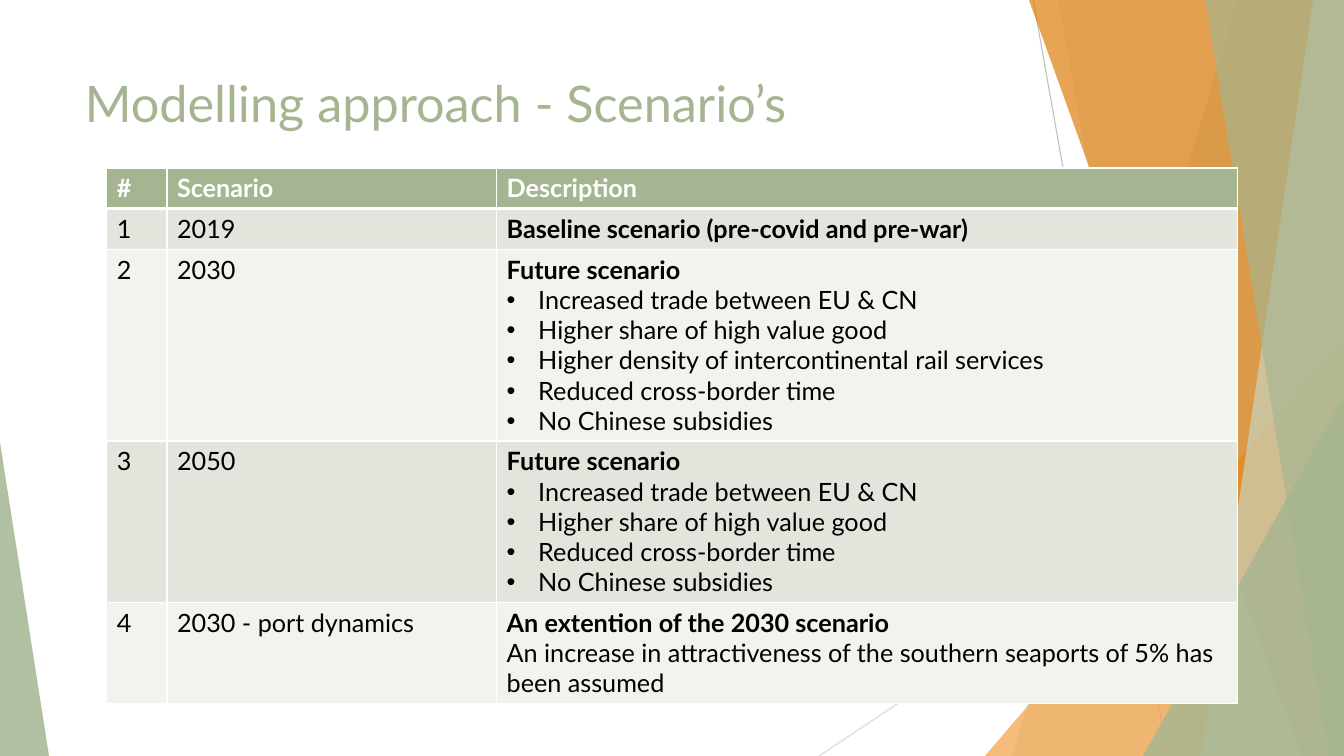
from dataclasses import dataclass

from lxml.etree import SubElement
from pptx import Presentation
from pptx.dml.color import RGBColor as Color
from pptx.enum.shapes import MSO_CONNECTOR as Connector, MSO_SHAPE as Preset
from pptx.oxml import parse_xml
from pptx.oxml.ns import nsdecls, qn
from pptx.util import Pt


@dataclass(frozen=True)
class Theme:
    font: str = "Lato"
    title_size: int = 36
    body_size: int = 18
    sage: str = "A5B592"
    pale_sage: str = "C9D3BE"
    orange: str = "F3A447"
    dark_orange: str = "DD7E0E"
    white: str = "FFFFFF"
    black: str = "000000"
    grey: str = "BFBFBF"
    light_grey: str = "D9D9D9"
    bands: tuple = ("E1E5DC", "F0F3EE")


def apply(target, **values):
    for name, value in values.items():
        setattr(target, name, value)


class Page:
    def __init__(self, deck, theme):
        self.theme = theme
        self.width, self.height = deck.slide_width.pt, deck.slide_height.pt
        self.shapes = deck.slides.add_slide(deck.slide_layouts[6]).shapes

    def line(self, start, end, color):
        line = self.shapes.add_connector(Connector.STRAIGHT, *map(Pt, start + end))
        line.line.color.rgb = Color.from_string(color)
        line.line.width = Pt(0.75)
        SubElement(line._element.spPr, qn("a:effectLst"))

    def paint(self, shape, color, opacity):
        shape.shadow.inherit = False
        shape.line.fill.background()
        shape.fill.solid()
        shape.fill.fore_color.rgb = Color.from_string(color)
        tint = shape._element.spPr.find(qn("a:solidFill"))[0]
        SubElement(tint, qn("a:alpha"), val=str(opacity * 1000))

    def facet(self, top_left, bottom_left, color, opacity):
        builder = self.shapes.build_freeform(Pt(top_left), 0)
        corners = [(self.width, 0), (self.width, self.height), (bottom_left, self.height)]
        builder.add_line_segments([(Pt(x), Pt(y)) for x, y in corners])
        self.paint(builder.convert_to_shape(), color, opacity)

    def triangle(self, left, top, width, apex, color, opacity):
        size = map(Pt, (left, top, width, self.height - top))
        shape = self.shapes.add_shape(Preset.ISOSCELES_TRIANGLE, *size)
        shape.adjustments[0] = apex
        self.paint(shape, color, opacity)

    def span(self, para, text, size, color, bold=False):
        span = para.add_run()
        span.text = text
        apply(span.font, name=self.theme.font, size=Pt(size), bold=bold)
        span.font.color.rgb = Color.from_string(color)

    def title(self, text, left, top, width, height):
        box = self.shapes.add_textbox(*map(Pt, (left, top, width, height)))
        box.text_frame.word_wrap = True
        self.span(box.text_frame.paragraphs[0], text, self.theme.title_size, self.theme.sage)

    def bullet(self, para):
        props = para._p.get_or_add_pPr()
        props.set("marL", str(Pt(22.5)))
        props.set("indent", str(Pt(-22.5)))
        SubElement(props, qn("a:buFont"), typeface="Arial")
        SubElement(props, qn("a:buChar"), char="•")

    def borders(self, cell, bottom):
        widths = {"lnL": 1, "lnR": 1, "lnT": 1, "lnB": bottom}
        for index, (side, width) in enumerate(widths.items()):
            border = parse_xml(
                f'<a:{side} {nsdecls("a")} w="{Pt(width)}"><a:solidFill>'
                f'<a:srgbClr val="{self.theme.white}"/></a:solidFill></a:{side}>')
            cell._tc.get_or_add_tcPr().insert(index, border)

    def cell(self, cell, lines, fill, color, bold_first, bulleted, bottom):
        cell.fill.solid()
        cell.fill.fore_color.rgb = Color.from_string(fill)
        self.borders(cell, bottom)
        frame = cell.text_frame
        for index, text in enumerate(lines):
            para = frame.add_paragraph() if index else frame.paragraphs[0]
            if index and bulleted:
                self.bullet(para)
            self.span(para, text, self.theme.body_size, color, bold_first and index == 0)

    def table(self, left, top, widths, heights, header, scenarios):
        area = map(Pt, (left, top, sum(widths), sum(heights)))
        table = self.shapes.add_table(len(heights), len(widths), *area).table
        apply(table, first_row=False, horz_banding=False)
        for column, width in zip(table.columns, widths):
            column.width = Pt(width)
        for row, height in zip(table.rows, heights):
            row.height = Pt(height)
        theme = self.theme
        for cell, text in zip(table.rows[0].cells, header):
            self.cell(cell, [text], theme.sage, theme.white, True, False, 3)
        for number, (name, bulleted, lines) in enumerate(scenarios, 1):
            fill = theme.bands[(number - 1) % 2]
            contents = [str(number)], [name], lines
            for index, (cell, content) in enumerate(zip(table.rows[number].cells, contents)):
                self.cell(cell, content, fill, theme.black, index == 2, bulleted, 1)


TRADE = ["Future scenario", "Increased trade between EU & CN", "Higher share of high value good"]
BORDER = ["Reduced cross-border time", "No Chinese subsidies"]
SCENARIOS = [
    ("2019", False, ["Baseline scenario (pre-covid and pre-war)"]),
    ("2030", True, TRADE + ["Higher density of intercontinental rail services"] + BORDER),
    ("2050", True, TRADE + BORDER),
    ("2030 - port dynamics", False, [
        "An extention of the 2030 scenario",
        "An increase in attractiveness of the southern seaports of 5% has been assumed"]),
]


def main():
    deck = Presentation()
    apply(deck, slide_width=Pt(960), slide_height=Pt(540))
    theme = Theme()
    page = Page(deck, theme)
    page.line((738, 0), (834, 540), theme.grey)
    page.line((960, 290), (585, 540), theme.light_grey)
    page.facet(884, 723, theme.sage, 30)
    page.facet(756, 852, theme.sage, 20)
    page.triangle(703.5, 240, 256.5, 1, theme.orange, 72)
    page.facet(735, 929.5, theme.dark_orange, 70)
    page.facet(938, 858, theme.pale_sage, 70)
    page.facet(861, 949, theme.sage, 65)
    page.triangle(816.5, 283, 143.5, 1, theme.sage, 80)
    page.triangle(0, 316, 35, 0, theme.sage, 85)
    page.title("Modelling approach - Scenario’s", 53.5, 48, 677, 104)
    page.table(76.3, 120, (43, 235.5, 529), (29, 29, 137, 115, 72),
               ("#", "Scenario", "Description"), SCENARIOS)
    deck.save("out.pptx")


if __name__ == "__main__":
    main()
